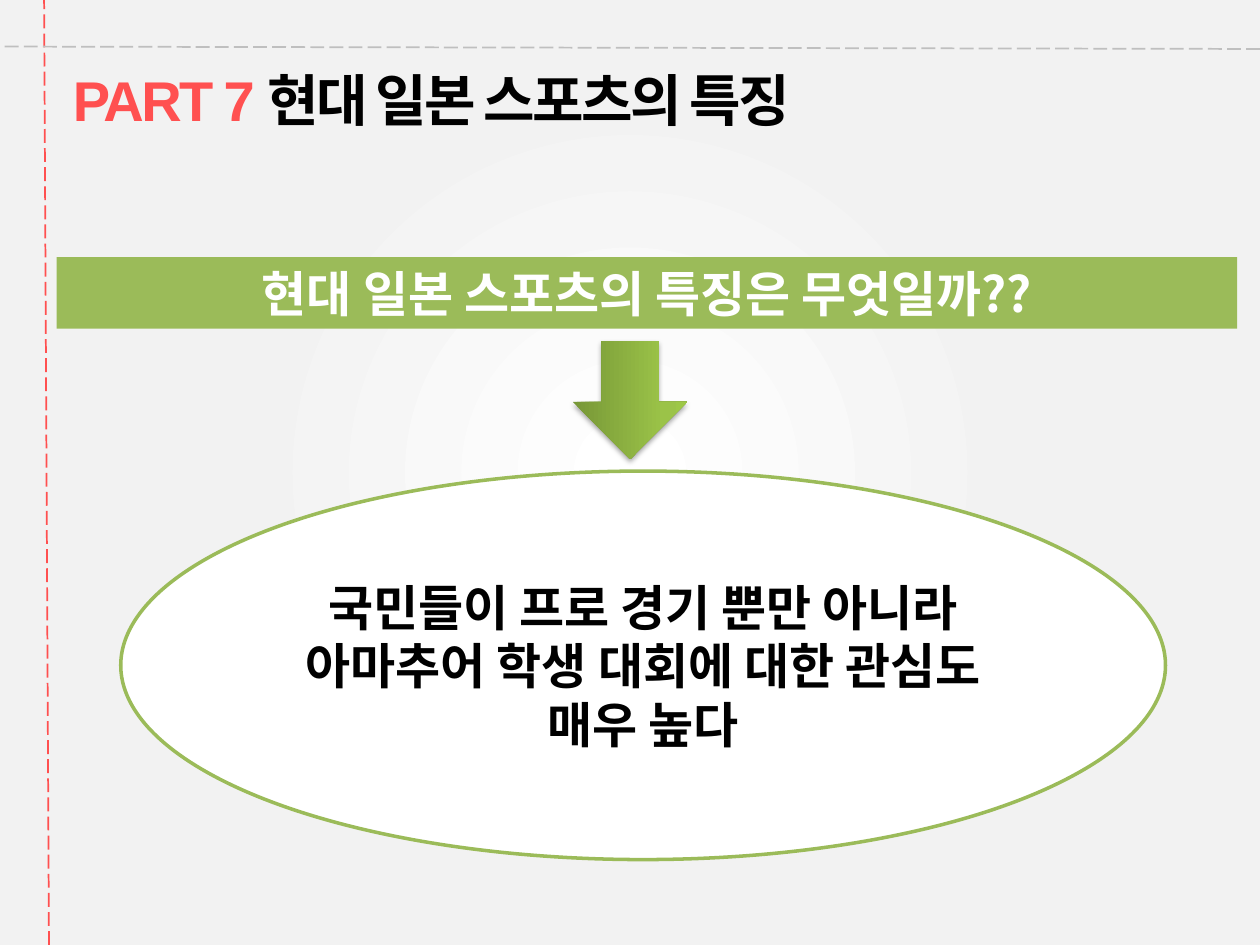
from lxml.etree import SubElement
from pptx import Presentation
from pptx.dml.color import RGBColor
from pptx.enum.dml import MSO_LINE
from pptx.enum.shapes import MSO_CONNECTOR, MSO_SHAPE
from pptx.enum.text import MSO_ANCHOR, MSO_AUTO_SIZE, PP_ALIGN
from pptx.oxml import parse_xml
from pptx.oxml.ns import nsdecls, qn
from pptx.util import Pt

LATIN, KOREAN = "Arial", "Noto Sans CJK KR"
GREEN, RED, GRAY, PALE = "9BBB59", "FF5050", "BFBFBF", "F2F2F2"
WHITE, BLACK = "FFFFFF", "000000"


def color(value):
    return RGBColor.from_string(value)


def gradient(stops, direction):
    marks = "".join(
        f'<a:gs pos="{place * 1000}"><a:srgbClr val="{value}"/></a:gs>'
        for place, value in stops)
    return parse_xml(f'<a:gradFill {nsdecls("a")} rotWithShape="1">'
                     f'<a:gsLst>{marks}</a:gsLst>{direction}</a:gradFill>')


class SlideBuilder:
    """Holds the text style and the current slide."""

    def __init__(self, slide):
        self.slide = slide

    def background(self, stops):
        fill = self.slide.background.fill
        fill.solid()
        properties = self.slide.element.cSld.find(qn("p:bg")).find(qn("p:bgPr"))
        center = ('<a:path path="circle"><a:fillToRect l="50000" t="50000" '
                  'r="50000" b="50000"/></a:path>')
        properties.replace(properties[0], gradient(stops, center))

    def style(self, font, size=None, face=None, ink=None):
        if size:
            font.size, font.bold = Pt(size), True
        if face:
            font.name = face
        if ink:
            font.color.rgb = color(ink)

    def east_asian(self, properties, face):
        SubElement(properties, qn("a:ea")).set("typeface", face)

    def dashed_line(self, start, end, ink):
        line = self.slide.shapes.add_connector(
            MSO_CONNECTOR.STRAIGHT, *map(Pt, start + end))
        line.line.color.rgb = color(ink)
        line.line.width = Pt(1)
        line.line.dash_style = MSO_LINE.LONG_DASH
        SubElement(line.element.spPr, qn("a:effectLst"))

    def shape(self, kind, place, fill=None, outline=None):
        shape = self.slide.shapes.add_shape(kind, *map(Pt, place))
        shape.shadow.inherit = False
        if fill:
            shape.fill.solid()
            shape.fill.fore_color.rgb = color(fill)
        if outline:
            shape.line.color.rgb = color(outline)
            shape.line.width = Pt(2)
        else:
            shape.line.fill.background()
        return shape

    def label(self, kind, place, text, ink, fill, outline=None):
        frame = self.shape(kind, place, fill, outline).text_frame
        frame.word_wrap = True
        frame.vertical_anchor = MSO_ANCHOR.MIDDLE
        para = frame.paragraphs[0]
        para.alignment = PP_ALIGN.CENTER
        self.style(para.font, 28, KOREAN, ink)
        span = para.add_run()
        span.text = text
        self.east_asian(span.font._element, KOREAN)
        return frame

    def title(self, place, parts):
        frame = self.slide.shapes.add_textbox(*map(Pt, place)).text_frame
        frame.word_wrap = True
        frame.auto_size = MSO_AUTO_SIZE.SHAPE_TO_FIT_TEXT
        para = frame.paragraphs[0]
        self.style(para.font, 32)
        for text, face, ink in parts:
            span = para.add_run()
            span.text = text
            self.style(span.font, face=face, ink=ink)
            properties = span.font._element
            self.east_asian(properties, face)
            properties.set("spc", "-150")
            properties.insert(0, parse_xml(
                f'<a:ln {nsdecls("a")} w="3175"><a:solidFill>'
                f'<a:srgbClr val="{PALE}"/></a:solidFill></a:ln>'))

    def down_arrow(self, place, stops):
        arrow = self.shape(MSO_SHAPE.RIGHT_ARROW, place)
        arrow.rotation = 90
        properties = arrow.element.spPr
        properties.find(qn("a:prstGeom")).addnext(
            gradient(stops, '<a:lin ang="16200000" scaled="0"/>'))
        properties.find(qn("a:effectLst")).append(parse_xml(
            f'<a:outerShdw {nsdecls("a")} blurRad="{Pt(3.1)}" dist="{Pt(1.8)}" '
            f'dir="5400000" rotWithShape="0"><a:srgbClr val="{BLACK}">'
            '<a:alpha val="35000"/></a:srgbClr></a:outerShdw>'))


def main():
    deck = Presentation()
    deck.slide_width, deck.slide_height = Pt(720), Pt(540)
    page = SlideBuilder(deck.slides.add_slide(deck.slide_layouts[6]))
    page.background([(0, WHITE), (50, PALE), (100, PALE)])

    # Answer
    page.label(MSO_SHAPE.OVAL, (69, 269.2, 597, 222),
               "국민들이 프로 경기 뿐만 아니라 아마추어 학생 대회에 대한 관심도 매우 높다",
               BLACK, WHITE, GREEN)

    # Guide lines
    page.dashed_line((28, 540), (25.2, 0), RED)
    page.dashed_line((720, 28), (0, 26.6), GRAY)

    # Heading
    page.title((34.5, 33.8, 552, 46),
               [("PART 7 ", LATIN, RED), ("현대 일본 스포츠의 특징", KOREAN, BLACK)])

    # Question
    banner = page.label(MSO_SHAPE.RECTANGLE, (32.4, 146.9, 674.6, 41),
                        "현대 일본 스포츠의 특징은 무엇일까??", WHITE, GREEN)
    banner.auto_size = MSO_AUTO_SIZE.SHAPE_TO_FIT_TEXT

    # Arrow from question to answer
    page.down_arrow((326.2, 195.8, 67.7, 65.5),
                    [(0, "779737"), (80, "9BC348"), (100, "9DC746")])

    deck.save("out.pptx")


if __name__ == "__main__":
    main()
